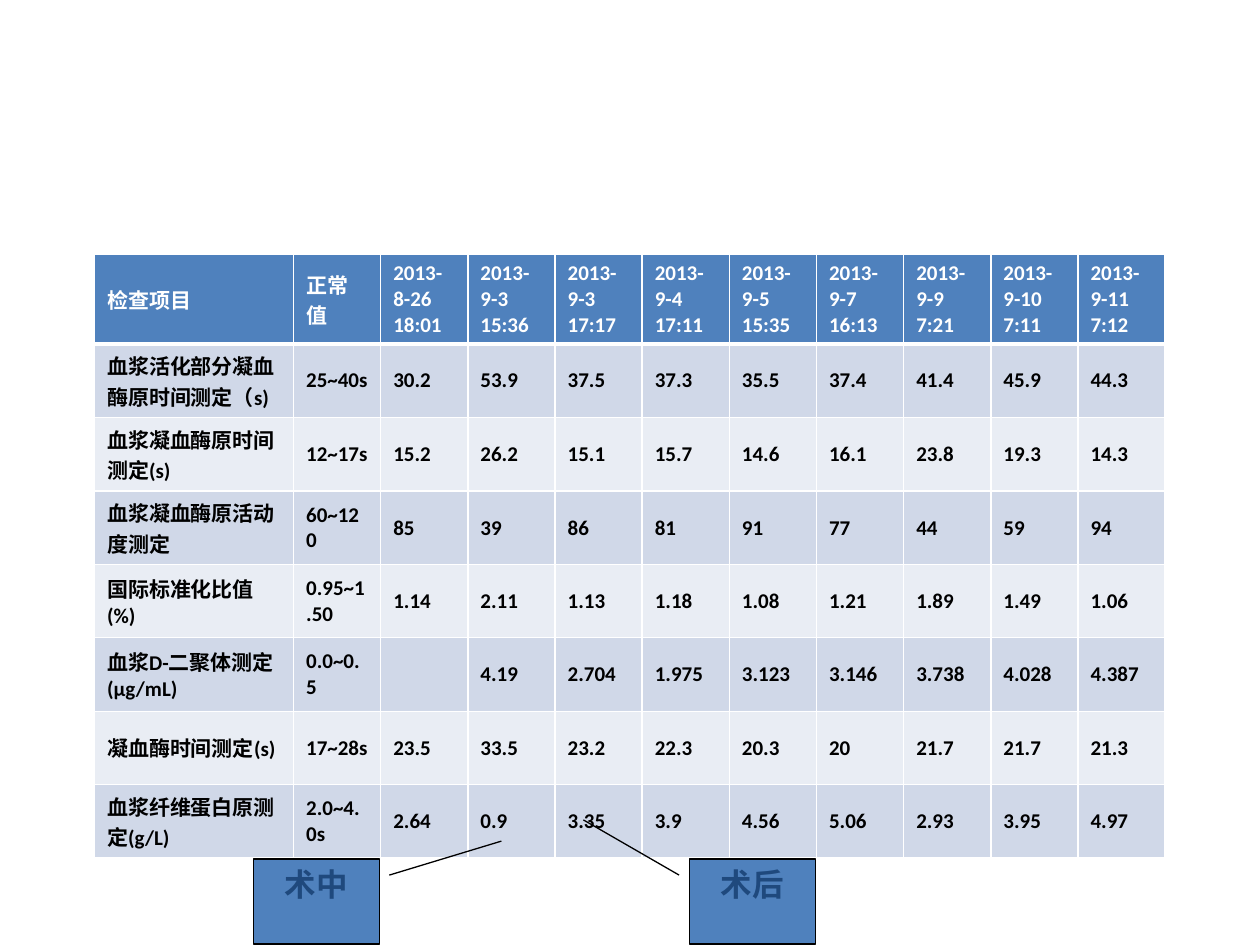
from dataclasses import dataclass

from lxml.etree import SubElement
from pptx import Presentation
from pptx.dml.color import RGBColor
from pptx.enum.shapes import MSO_SHAPE
from pptx.enum.text import MSO_ANCHOR, PP_ALIGN
from pptx.oxml.ns import qn
from pptx.slide import Slide
from pptx.table import _Cell
from pptx.text.text import TextFrame
from pptx.util import Inches, Pt

SLIDE_WIDTH, SLIDE_HEIGHT = Inches(10), Inches(7.5)
COLORS = {
    "blue": "4F81BD",
    "navy": "1F497D",
    "band_dark": "D0D8E8",
    "band_light": "E9EDF4",
    "white": "FFFFFF",
    "black": "000000",
}

# Table grid, in inches
TABLE_LEFT, TABLE_TOP, TABLE_WIDTH = 0.75, 2.02, 8.5
ITEM_WIDTH, HEADER_HEIGHT, ROW_HEIGHT = 1.58, 0.7, 0.58

HEADER = [
    "检查项目", "正常值", "2013-8-26 18:01", "2013-9-3 15:36", "2013-9-3 17:17",
    "2013-9-4 17:11", "2013-9-5 15:35", "2013-9-7 16:13", "2013-9-9 7:21",
    "2013-9-10 7:11", "2013-9-11 7:12",
]


@dataclass(frozen=True)
class LabTest:
    name: str
    normal_range: str
    results: tuple[str, ...]


@dataclass(frozen=True)
class Callout:
    text: str
    left: float  # share of the slide's width
    adjustments: tuple[float, ...]  # line start y, x and line end y, x


LAB_TESTS = [
    LabTest("血浆活化部分凝血酶原时间测定（s)", "25~40s",
            ("30.2", "53.9", "37.5", "37.3", "35.5", "37.4", "41.4", "45.9", "44.3")),
    LabTest("血浆凝血酶原时间测定(s)", "12~17s",
            ("15.2", "26.2", "15.1", "15.7", "14.6", "16.1", "23.8", "19.3", "14.3")),
    LabTest("血浆凝血酶原活动度测定", "60~120",
            ("85", "39", "86", "81", "91", "77", "44", "59", "94")),
    LabTest("国际标准化比值(%)", "0.95~1.50",
            ("1.14", "2.11", "1.13", "1.18", "1.08", "1.21", "1.89", "1.49", "1.06")),
    LabTest("血浆D-二聚体测定(μg/mL)", "0.0~0.5",
            ("", "4.19", "2.704", "1.975", "3.123", "3.146", "3.738", "4.028", "4.387")),
    LabTest("凝血酶时间测定(s)", "17~28s",
            ("23.5", "33.5", "23.2", "22.3", "20.3", "20", "21.7", "21.7", "21.3")),
    LabTest("血浆纤维蛋白原测定(g/L)", "2.0~4.0s",
            ("2.64", "0.9", "3.35", "3.9", "4.56", "5.06", "2.93", "3.95", "4.97")),
]
CALLOUTS = [
    Callout("术中", 0.201, (0.19, 1.08, -0.21, 1.97)),
    Callout("术后", 0.547, (0.19, -0.08, -0.46, -0.84)),
]


def color(name: str) -> RGBColor:
    return RGBColor.from_string(COLORS[name])


def write_text(frame: TextFrame, text: str, *, size: float, font: str, color_name: str,
               align: PP_ALIGN = PP_ALIGN.LEFT, space_before: float = 0) -> None:
    paragraph = frame.paragraphs[0]
    paragraph.alignment = align
    paragraph.space_before = Pt(space_before)
    run = paragraph.add_run()
    run.text = text
    run.font.size = Pt(size)
    run.font.name = font
    run.font.bold = True
    run.font.color.rgb = color(color_name)


def add_borders(cell: _Cell, top: float, bottom: float) -> None:
    properties = cell._tc.get_or_add_tcPr()
    for side, width in (("L", 1), ("R", 1), ("T", top), ("B", bottom)):
        line = SubElement(properties, qn(f"a:ln{side}"), w=str(Pt(width)))
        fill = SubElement(line, qn("a:solidFill"))
        SubElement(fill, qn("a:srgbClr"), val=COLORS["white"])


def add_lab_table(slide: Slide) -> None:
    rows = [HEADER] + [[test.name, test.normal_range, *test.results] for test in LAB_TESTS]
    height = HEADER_HEIGHT + ROW_HEIGHT * len(LAB_TESTS)
    table = slide.shapes.add_table(
        len(rows), len(HEADER), Inches(TABLE_LEFT), Inches(TABLE_TOP),
        Inches(TABLE_WIDTH), Inches(height)).table

    value_width = (TABLE_WIDTH - ITEM_WIDTH) / (len(HEADER) - 1)
    for index, column in enumerate(table.columns):
        column.width = Inches(value_width if index else ITEM_WIDTH)

    for row_index, texts in enumerate(rows):
        is_header = row_index == 0
        table.rows[row_index].height = Inches(HEADER_HEIGHT if is_header else ROW_HEIGHT)
        band = "blue" if is_header else "band_dark" if row_index % 2 else "band_light"
        for column_index, text in enumerate(texts):
            cell = table.cell(row_index, column_index)
            cell.vertical_anchor = MSO_ANCHOR.MIDDLE
            # A thick rule separates the header from the results
            add_borders(cell, top=3 if row_index == 1 else 1, bottom=3 if is_header else 1)
            cell.fill.solid()
            cell.fill.fore_color.rgb = color(band)
            if text:
                write_text(cell.text_frame, text, size=12, font="Calibri", space_before=2.4,
                           color_name="white" if is_header else "black")


def add_callout(slide: Slide, callout: Callout) -> None:
    shape = slide.shapes.add_shape(
        MSO_SHAPE.LINE_CALLOUT_1, int(SLIDE_WIDTH * callout.left), int(SLIDE_HEIGHT * 0.909),
        int(SLIDE_WIDTH * 0.1), int(SLIDE_HEIGHT * 0.09))
    for index, value in enumerate(callout.adjustments):
        shape.adjustments[index] = value
    shape.shadow.inherit = False
    shape.fill.solid()
    shape.fill.fore_color.rgb = color("blue")
    shape.line.color.rgb = color("black")
    shape.line.width = Pt(0.75)
    shape.text_frame.vertical_anchor = MSO_ANCHOR.TOP
    write_text(shape.text_frame, callout.text, size=18, font="Arial",
               color_name="navy", align=PP_ALIGN.CENTER)


def main() -> None:
    presentation = Presentation()
    presentation.slide_width, presentation.slide_height = SLIDE_WIDTH, SLIDE_HEIGHT
    slide = presentation.slides.add_slide(presentation.slide_layouts[6])

    # Coagulation results by date
    add_lab_table(slide)

    # Markers for during and after surgery
    for callout in CALLOUTS:
        add_callout(slide, callout)

    presentation.save("out.pptx")


if __name__ == "__main__":
    main()
